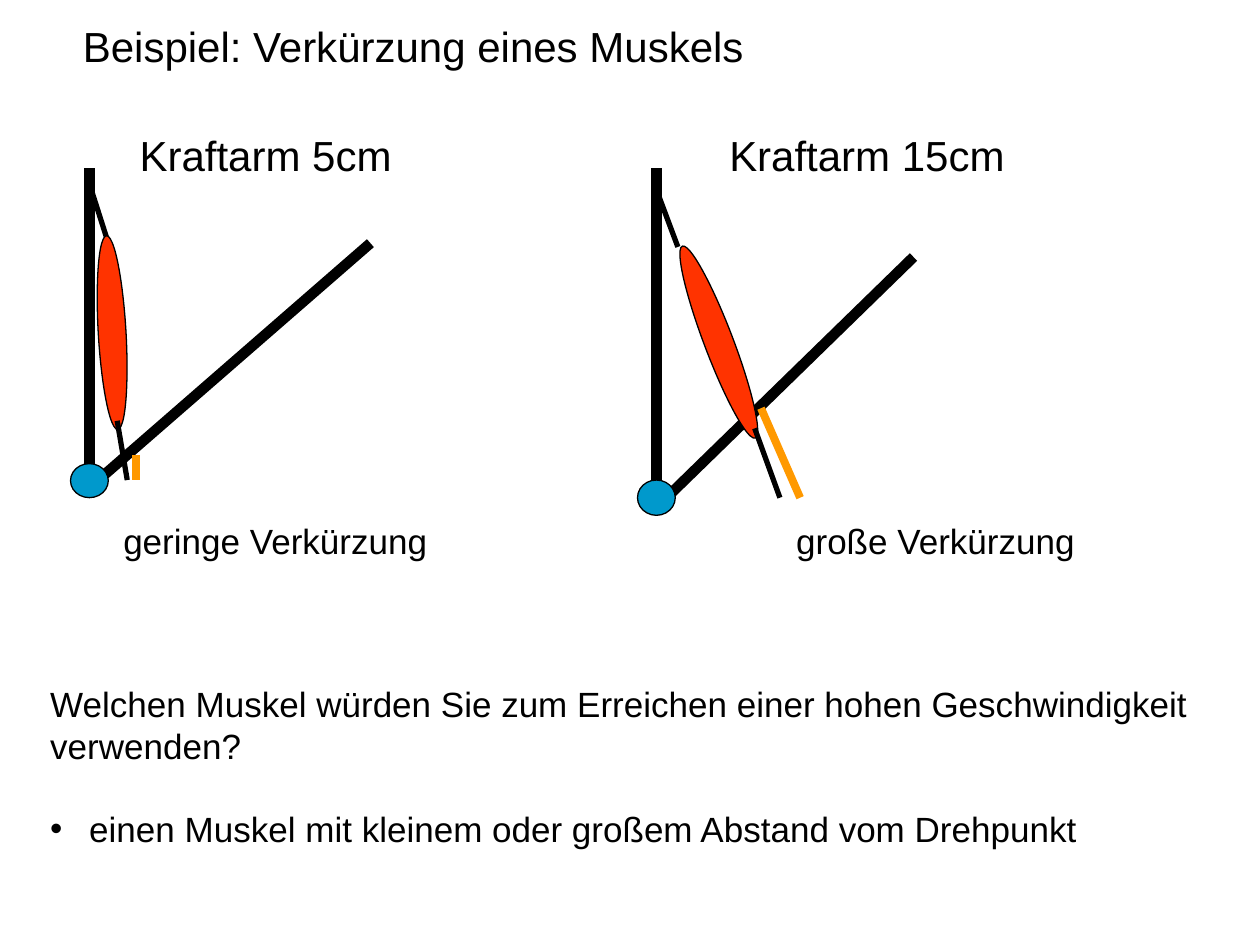
from dataclasses import dataclass

from lxml.etree import SubElement
from pptx import Presentation
from pptx.dml.color import RGBColor as RGB
from pptx.enum.shapes import MSO_CONNECTOR as CONN, MSO_SHAPE as SHAPE
from pptx.enum.text import MSO_AUTO_SIZE as FIT
from pptx.oxml.ns import qn
from pptx.util import Inches, Pt


@dataclass(frozen=True)
class Theme:
    font: str = "Arial"
    ink: RGB = RGB(0x00, 0x00, 0x00)
    muscle: RGB = RGB(0xFF, 0x33, 0x00)
    joint: RGB = RGB(0x00, 0x99, 0xCC)
    shortening: RGB = RGB(0xFF, 0x99, 0x00)
    heading: int = 24
    body: int = 20
    bone: float = 6
    tendon: float = 3
    marker: float = 4.5
    outline: float = 0.75


class SlideBuilder:
    """Draws styled text, lines, ellipses and limbs on one slide."""

    def __init__(self, slide, theme):
        self.s, self.theme = slide, theme

    def text(self, box, paragraphs, size, tab=None, bullet_last=False):
        sp = self.s.shapes.add_textbox(*map(Inches, box))
        tf = sp.text_frame
        tf.word_wrap = True
        tf.auto_size = FIT.SHAPE_TO_FIT_TEXT
        tf.text = "\n".join(paragraphs)
        if tab:
            tabs = SubElement(tf.paragraphs[0]._p.get_or_add_pPr(), qn("a:tabLst"))
            SubElement(tabs, qn("a:tab"), pos=str(Inches(tab)), algn="l")
        if bullet_last:
            self.bullet(tf.paragraphs[-1], size)
        for p in tf.paragraphs:
            for r in p.runs:
                r.font.name = self.theme.font
                r.font.size = Pt(size)
                r.font.color.rgb = self.theme.ink

    def bullet(self, p, size):
        p.space_before = Pt(size * 1.15)
        pPr = p._p.get_or_add_pPr()
        pPr.set("marL", str(Inches(0.31)))
        pPr.set("indent", str(-Inches(0.31)))
        SubElement(pPr, qn("a:buFont"), typeface=self.theme.font)
        SubElement(pPr, qn("a:buChar"), char="•")

    def line(self, group, ends, width, color=None):
        cxn = group.shapes.add_connector(CONN.STRAIGHT, *map(Inches, ends))
        cxn.line.width = Pt(width)
        cxn.line.color.rgb = color or self.theme.ink
        SubElement(cxn._element.spPr, qn("a:effectLst"))

    def ellipse(self, group, box, fill, rotation=0):
        sp = group.shapes.add_shape(SHAPE.OVAL, *map(Inches, box))
        sp.shadow.inherit = False
        sp.rotation = rotation
        sp.fill.solid()
        sp.fill.fore_color.rgb = fill
        sp.line.color.rgb = self.theme.ink
        sp.line.width = Pt(self.theme.outline)

    def limb(self, forearm, upper_arm, upper_tendon, muscle, tilt, lower_tendon, joint, shortening):
        t = self.theme
        group = self.s.shapes.add_group_shape()
        self.line(group, forearm, t.bone)
        self.line(group, upper_arm, t.bone)
        self.line(group, upper_tendon, t.tendon)
        self.ellipse(group, muscle, t.muscle, tilt)
        self.line(group, lower_tendon, t.tendon)
        self.ellipse(group, joint, t.joint)
        self.line(group, shortening, t.marker, t.shortening)


def main():
    prs = Presentation()
    prs.slide_width, prs.slide_height = Inches(10), Inches(7.5)
    theme = Theme()
    b = SlideBuilder(prs.slides.add_slide(prs.slide_layouts[6]), theme)

    b.text((0.56, 0.11, 10, 0.5), ["Beispiel: Verkürzung eines Muskels"], theme.heading)
    b.limb(
        forearm=(2.94, 1.93, 0.78, 3.81),
        upper_arm=(0.71, 3.81, 0.71, 1.33),
        upper_tendon=(0.71, 1.46, 0.86, 1.93),
        muscle=(0.78, 1.87, 0.22, 1.54),
        tilt=356.7,
        lower_tendon=(0.93, 3.34, 1.01, 3.81),
        joint=(0.56, 3.68, 0.3, 0.27),
        shortening=(1.08, 3.61, 1.08, 3.81),
    )
    b.limb(
        forearm=(7.25, 2.04, 5.29, 3.95),
        upper_arm=(5.21, 3.95, 5.21, 1.33),
        upper_tendon=(5.2, 1.48, 5.38, 1.96),
        muscle=(5.59, 1.9, 0.23, 1.63),
        tilt=339.2,
        lower_tendon=(5.99, 3.4, 6.19, 3.95),
        joint=(5.06, 3.81, 0.3, 0.28),
        shortening=(6.04, 3.24, 6.35, 3.95),
    )
    b.text((0.88, 4.07, 7.79, 0.44), ["geringe Verkürzung\tgroße Verkürzung"], theme.body, tab=5.34)
    b.text((1.01, 0.98, 8.13, 0.5), ["Kraftarm 5cm\tKraftarm 15cm"], theme.heading, tab=4.68)
    b.text(
        (0.3, 5.37, 9.25, 1.45),
        [
            "Welchen Muskel würden Sie zum Erreichen einer hohen Geschwindigkeit verwenden?",
            "einen Muskel mit kleinem oder großem Abstand vom Drehpunkt",
        ],
        theme.body,
        bullet_last=True,
    )
    prs.save("out.pptx")


if __name__ == "__main__":
    main()
